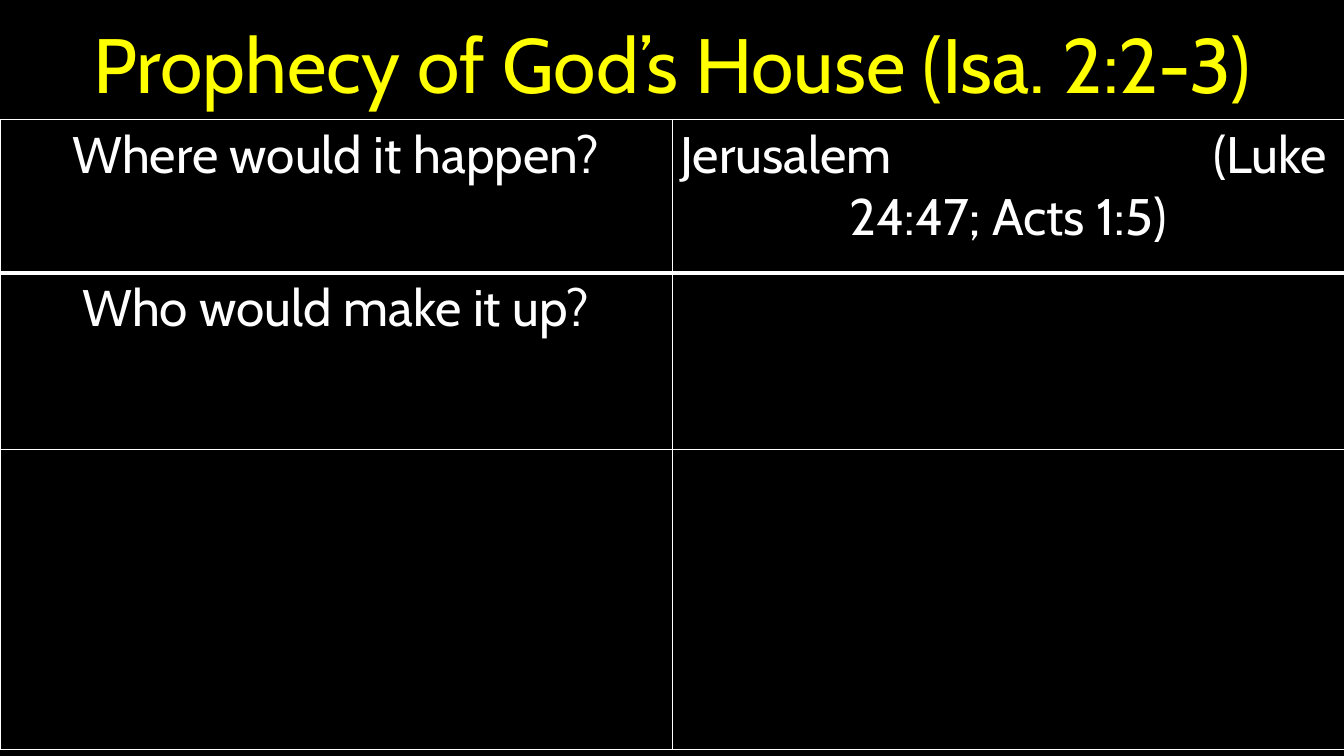
from lxml.etree import SubElement as Sub
from pptx import Presentation
from pptx.dml.color import RGBColor as RGB
from pptx.enum.text import MSO_ANCHOR as ANCHOR, PP_ALIGN as ALIGN
from pptx.oxml.ns import qn
from pptx.util import Inches, Pt

WIDTH, HEIGHT = 16, 9
BLACK, WHITE, YELLOW = "000000", "FFFFFF", "FFFF00"


def color(hex_value):
    return RGB.from_string(hex_value)


class Deck:
    font = "Cabin"

    def __init__(self):
        self.prs = Presentation()
        self.prs.slide_width, self.prs.slide_height = Inches(WIDTH), Inches(HEIGHT)
        self.s = self.prs.slides.add_slide(self.prs.slide_layouts[6])
        fill = self.s.background.fill
        fill.solid()
        fill.fore_color.rgb = color(BLACK)

    def box(self, x, y, w, h):
        """Turn shares of the slide into lengths."""
        return [Inches(share * side) for share, side in
                zip((x, y, w, h), (WIDTH, HEIGHT) * 2)]

    def add_text(self, p, text, size, hex_value, align=ALIGN.CENTER):
        p.alignment = align
        r = p.add_run()
        r.text = text
        for name, value in {"name": self.font, "size": Pt(size)}.items():
            setattr(r.font, name, value)
        r.font.color.rgb = color(hex_value)

    def title(self, text, *area):
        tf = self.s.shapes.add_textbox(*self.box(*area)).text_frame
        style = {"word_wrap": True, "vertical_anchor": ANCHOR.MIDDLE,
                 "margin_left": Inches(0.14), "margin_right": Inches(0.14),
                 "margin_top": Inches(0.07), "margin_bottom": Inches(0.07)}
        for name, value in style.items():
            setattr(tf, name, value)
        self.add_text(tf.paragraphs[0], text, 66, YELLOW)

    def tab_stop(self, p, position):
        tabs = Sub(p._p.get_or_add_pPr(), qn("a:tabLst"))
        Sub(tabs, qn("a:tab"), pos=str(Inches(position)), algn="l")

    def borders(self, cell, top, bottom):
        tc_pr = cell._tc.get_or_add_tcPr()
        for side, width in {"L": 1, "R": 1, "T": top, "B": bottom}.items():
            ln = Sub(tc_pr, qn(f"a:ln{side}"), w=str(Pt(width)))
            Sub(Sub(ln, qn("a:solidFill")), qn("a:srgbClr"), val=WHITE)

    def table(self, rows, heights, *area):
        columns = len(rows[0])
        table = self.s.shapes.add_table(len(rows), columns, *self.box(*area)).table
        table.first_row = table.horz_banding = False
        for i, (row, height) in enumerate(zip(rows, heights)):
            table.rows[i].height = Inches(height)
            for j, lines in enumerate(row):
                cell = table.cell(i, j)
                # A thick rule separates the first row from the rest
                self.borders(cell, 3 if i == 1 else 1, 3 if i == 0 else 1)
                cell.fill.solid()
                cell.fill.fore_color.rgb = color(BLACK)
                tf = cell.text_frame
                for k, line in enumerate(lines):
                    p = tf.add_paragraph() if k else tf.paragraphs[0]
                    tabbed = "\t" in line
                    self.add_text(p, line, 44, WHITE,
                                  ALIGN.LEFT if tabbed else ALIGN.CENTER)
                    if tabbed:
                        self.tab_stop(p, 6.35)


def main():
    deck = Deck()

    # Heading
    deck.title("Prophecy of God’s House (Isa. 2:2-3)", 0, 0, 1, 1.5 / HEIGHT)

    # Questions on the left, answers on the right
    rows = [
        [["Where would it happen?"], ["Jerusalem\t(Luke", "24:47; Acts 1:5)"]],
        [["Who would make it up?"], []],
        [[], []],
    ]
    deck.table(rows, [1.83, 2.1, 3.57], 0, 1.42 / HEIGHT, 1, 7.5 / HEIGHT)

    deck.prs.save("out.pptx")


if __name__ == "__main__":
    main()
